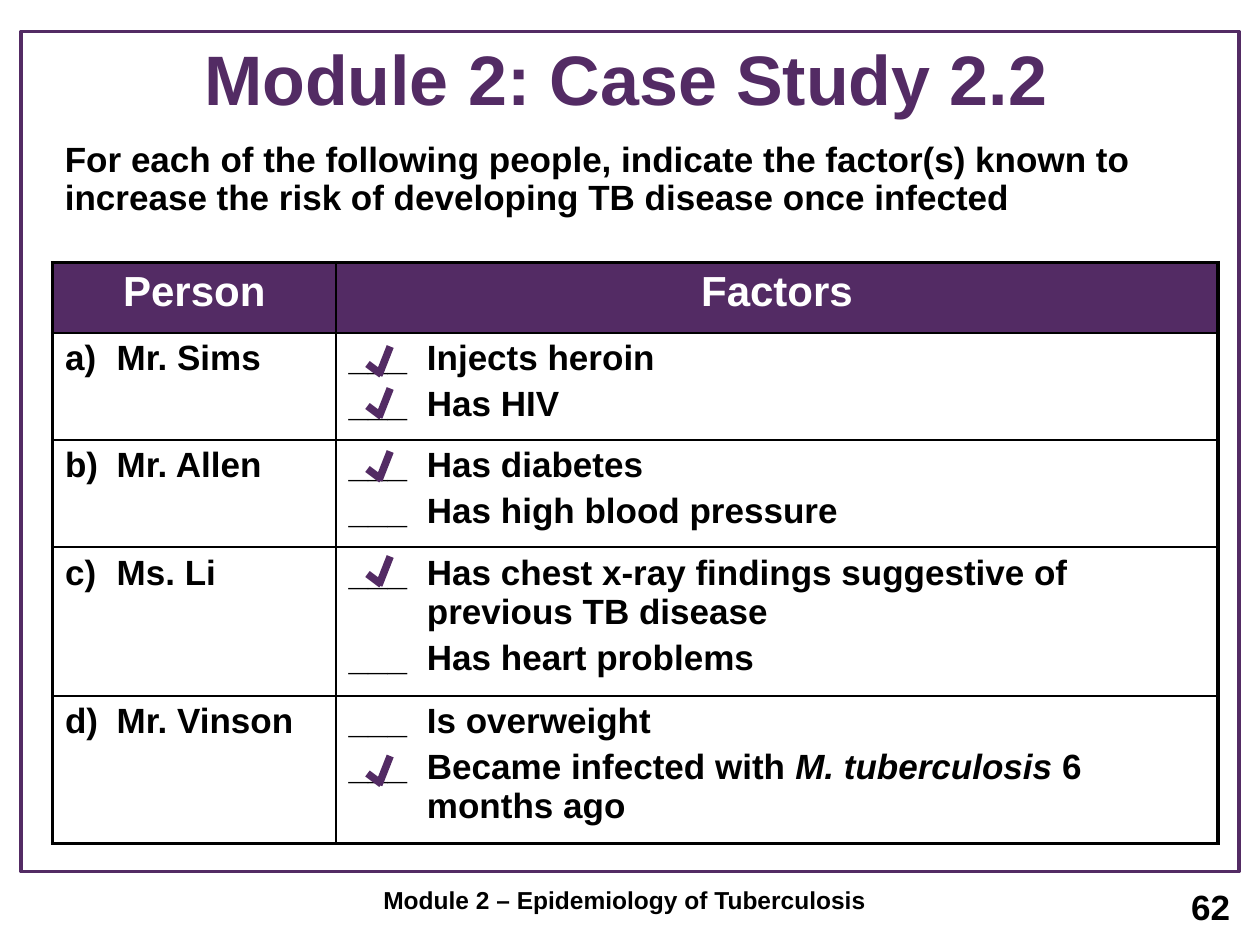
from dataclasses import dataclass

from lxml.etree import SubElement
from pptx import Presentation
from pptx.dml.color import RGBColor
from pptx.enum.shapes import MSO_CONNECTOR, MSO_SHAPE
from pptx.enum.text import MSO_ANCHOR, PP_ALIGN
from pptx.oxml.ns import qn
from pptx.util import Pt


@dataclass(frozen=True)
class Theme:
    """Colours, font and type sizes of the slide."""
    purple: RGBColor = RGBColor(0x53, 0x2B, 0x64)
    black: RGBColor = RGBColor(0, 0, 0)
    white: RGBColor = RGBColor(255, 255, 255)
    font: str = "Arial"
    title: float = 40
    head: float = 24
    body: float = 20
    foot: float = 14


THEME = Theme()

PEOPLE = [
    ("a)\tMr. Sims", ["Injects heroin", "Has HIV"]),
    ("b)\tMr. Allen", ["Has diabetes", "Has high blood pressure"]),
    ("c)\tMs. Li", ["Has chest x-ray findings suggestive of previous TB disease",
                    "Has heart problems"]),
    ("d)\tMr. Vinson", ["Is overweight",
                        "Became infected with *M. tuberculosis* 6 months ago"]),
]
COLS = [162, 504]
ROWS = [40.2, 61.2, 61.2, 85, 84.3]
TICKS = [198, 222, 258, 318, 432]


def style(para, size, color, align=PP_ALIGN.LEFT):
    """Give a paragraph and its runs their look."""
    para.alignment = align
    for run in para.runs:
        font = run.font
        font.name, font.size, font.bold = THEME.font, Pt(size), True
        font.color.rgb = color


def add_text(slide, box, text, size, color, align=PP_ALIGN.LEFT, anchor=MSO_ANCHOR.TOP):
    """Place one wrapped paragraph in a box and return it."""
    frame = slide.shapes.add_textbox(*map(Pt, box)).text_frame
    frame.word_wrap = True
    frame.vertical_anchor = anchor
    frame.text = text
    para = frame.paragraphs[0]
    style(para, size, color, align)
    return para


def hang(para, indent):
    """Indent all lines of a paragraph but the first."""
    props = para._p.get_or_add_pPr()
    props.set("marL", str(Pt(indent)))
    props.set("indent", str(-Pt(indent)))


def add_border(cell, side, width):
    """Draw one black border of a cell."""
    props = cell._tc.get_or_add_tcPr()
    line = SubElement(props, qn(f"a:ln{side}"), w=str(Pt(width)))
    fill = SubElement(line, qn("a:solidFill"))
    SubElement(fill, qn("a:srgbClr"), val=str(THEME.black))


def fill_cell(cell, lines, indent):
    """Write hanging lines in a cell, with starred words in italics."""
    frame = cell.text_frame
    for i, line in enumerate(lines):
        para = frame.add_paragraph() if i else frame.paragraphs[0]
        for j, part in enumerate(line.split("*")):
            run = para.add_run()
            run.text = part
            run.font.italic = j % 2 == 1
        style(para, THEME.body, THEME.black)
        para.space_before = Pt(THEME.body * 0.2)
        hang(para, indent)


def add_grid(slide, box):
    """Build the table of people and their factors."""
    table = slide.shapes.add_table(len(ROWS), len(COLS), *map(Pt, box)).table
    table.first_row = table.horz_banding = False
    for col, width in zip(table.columns, COLS):
        col.width = Pt(width)
    for row, height in zip(table.rows, ROWS):
        row.height = Pt(height)
    for r in range(len(ROWS)):
        for c in range(len(COLS)):
            cell = table.cell(r, c)
            outer = {"L": c == 0, "R": c == len(COLS) - 1,
                     "T": r == 0, "B": r == len(ROWS) - 1}
            for side, edge in outer.items():
                add_border(cell, side, 2.25 if edge else 1)
            cell.fill.background()
    for c, label in enumerate(["Person", "Factors"]):
        cell = table.cell(0, c)
        cell.fill.solid()
        cell.fill.fore_color.rgb = THEME.purple
        cell.text_frame.text = label
        style(cell.text_frame.paragraphs[0], THEME.head, THEME.white, PP_ALIGN.CENTER)
    for r, (person, factors) in enumerate(PEOPLE, 1):
        fill_cell(table.cell(r, 0), [person], 29.5)
        fill_cell(table.cell(r, 1), [f"___\t{factor}" for factor in factors], 44.8)


def add_tick(slide, x, y):
    """Draw a tick from two grouped strokes."""
    group = slide.shapes.add_group_shape()
    for ax, ay, bx, by in [(0, 10, 8, 16), (6.5, 16.5, 13, 0)]:
        ends = map(Pt, (x + ax, y + ay, x + bx, y + by))
        line = group.shapes.add_connector(MSO_CONNECTOR.STRAIGHT, *ends)
        line.line.color.rgb = THEME.purple
        line.line.width = Pt(4.25)
        SubElement(line._element.spPr, qn("a:effectLst"))


def add_frame(slide, box):
    """Draw the outline around the content."""
    frame = slide.shapes.add_shape(MSO_SHAPE.RECTANGLE, *map(Pt, box))
    frame.shadow.inherit = False
    frame.fill.background()
    frame.line.color.rgb = THEME.purple
    frame.line.width = Pt(2)


def add_header(slide, box):
    """Place the title and the task below it."""
    x, y, w, h = box
    add_text(slide, (x + 3.6, y, w - 18, 66.2), "Module 2: Case Study 2.2",
             THEME.title, THEME.purple, PP_ALIGN.CENTER, MSO_ANCHOR.BOTTOM)
    task = add_text(slide, (x, y + h - 54, w, 54),
                    "For each of the following people, indicate the factor(s) known to "
                    "increase the risk of developing TB disease once infected",
                    THEME.body, THEME.black)
    task.line_spacing = 0.9
    task.space_before = Pt(THEME.body * 0.2)


def add_footer(slide, box):
    """Place the module name and the page number."""
    x, y, w, h = box
    add_text(slide, (x, y, 462, h), "Module 2 – Epidemiology of Tuberculosis",
             THEME.foot, THEME.black, PP_ALIGN.CENTER)
    add_text(slide, (x + w - 168, y, 168, h), "62",
             THEME.body, THEME.black, PP_ALIGN.RIGHT)


def main():
    """Build the slide and save it."""
    deck = Presentation()
    deck.slide_width, deck.slide_height = Pt(720), Pt(540)
    slide = deck.slides.add_slide(deck.slide_layouts[6])
    add_header(slide, (30, 5.8, 666, 126))
    add_grid(slide, (30, 150, sum(COLS), sum(ROWS)))
    add_footer(slide, (126, 502.3, 584, 37.5))
    for y in TICKS:
        add_tick(slide, 210, y)
    add_frame(slide, (12, 18, 696, 480))
    deck.save("out.pptx")


if __name__ == "__main__":
    main()
